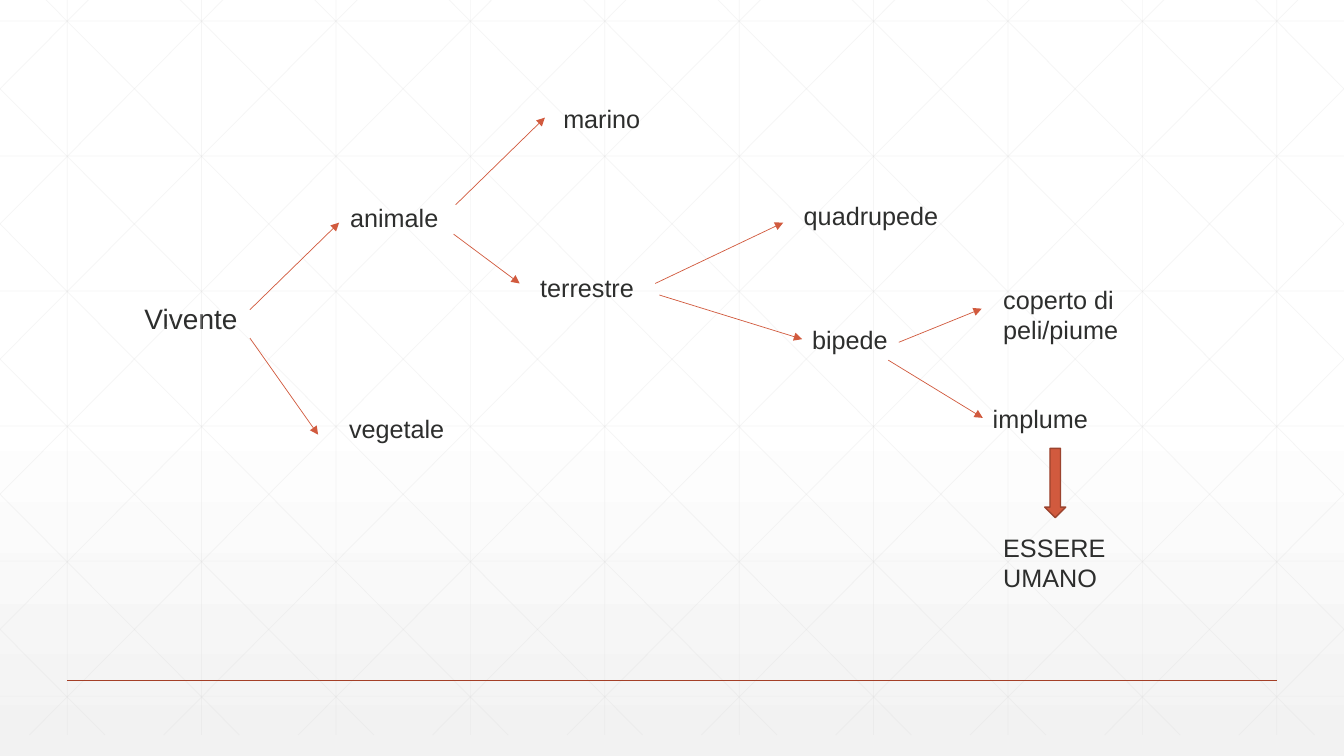
from copy import deepcopy

from lxml.etree import SubElement
from pptx import Presentation
from pptx.dml.color import RGBColor
from pptx.enum.shapes import MSO_CONNECTOR as Connector, MSO_SHAPE as Shape
from pptx.enum.text import MSO_ANCHOR as Anchor, MSO_AUTO_SIZE as AutoSize
from pptx.oxml.ns import qn
from pptx.util import Pt

EMU_PER_PX = 9525
WIDTH, HEIGHT = 1280, 720
LEFT_SIDE = 1
COLORS = {
    "white": "FFFFFF",
    "mist": "F2F2F2",
    "grid": "D9D9D9",
    "rule": "A43F27",
    "arrow": "D15A3E",
    "arrow_edge": "9B432E",
    "text": "2D2E2D",
}
# text, left, top, width, height
TERMS = [
    ("animale", 324, 188, 162, 38),
    ("vegetale", 323, 389, 162, 38),
    ("marino", 527, 94, 164, 38),
    ("terrestre", 505, 255, 164, 38),
    ("quadrupede", 756, 186, 164, 38),
    ("bipede", 764, 304, 164, 38),
    ("coperto di peli/piume", 946, 266, 164, 68),
    ("implume", 936, 379, 164, 38),
    ("ESSERE\nUMANO", 946, 502, 149, 68),
]
# start, end, term whose left side the arrow joins
BRANCHES = [
    ((238, 295), (323, 212), None),
    ((238, 322), (303, 414), None),
    ((434, 195), (519, 112), None),
    ((432, 223), (495, 270), None),
    ((624, 270), (746, 212), None),
    ((628, 281), (764, 323), "bipede"),
    ((856, 326), (935, 294), None),
    ((846, 343), (936, 398), "implume"),
]


def px(*lengths):
    """Turn pixel lengths into a list of EMU."""
    return [round(length * EMU_PER_PX) for length in lengths]


def rgb(name):
    return RGBColor.from_string(COLORS[name])


def write_text(frame, text, size=18, color="text", font="Arial"):
    frame.word_wrap = True
    frame.text = text
    for paragraph in frame.paragraphs:
        paragraph.font.size = Pt(size)
        paragraph.font.name = font
        paragraph.font.color.rgb = rgb(color)


def add_line(shapes, start, end, color="arrow", weight=0.5, opacity=None, arrow=False):
    line = shapes.add_connector(Connector.STRAIGHT, *px(*start, *end))
    line.line.color.rgb = rgb(color)
    line.line.width = Pt(weight)
    properties = line.line._get_or_add_ln()
    if opacity:
        tint = properties.find(".//" + qn("a:srgbClr"))
        SubElement(tint, qn("a:alpha"), val=str(opacity * 1000))
    if arrow:
        SubElement(properties, qn("a:tailEnd"), type="triangle")
    SubElement(line._element.spPr, qn("a:effectLst"))
    return line


def paint_background(slide):
    fill = slide.background.fill
    fill.gradient()
    fill.gradient_angle = 270
    stop_list = slide.element.find(".//" + qn("a:gsLst"))
    stop_list.insert(1, deepcopy(stop_list[0]))
    stops = [(0, "white"), (0.53, "white"), (1, "mist")]
    for stop, (position, color) in zip(fill.gradient_stops, stops):
        stop.position = position
        stop.color.rgb = rgb(color)


def add_grid(slide):
    """Draw the faint square grid and the diagonals, cut off at the slide sides."""
    top, bottom, step, run = -20, 700, 128, 716
    slope = (bottom - top) / run
    segments = [((x, top), (x, bottom)) for x in range(64, WIDTH, step)]
    for row in range(6):
        y = 20 + 128.6 * row
        segments.append(((0, y), (WIDTH, y)))
    for column in range(-5, 10):
        origin = 24 + step * column
        left, right = max(origin, 0), min(origin + run, WIDTH)
        y_left, y_right = (top + (x - origin) * slope for x in (left, right))
        segments.append(((left, y_left), (right, y_right)))
        segments.append(((WIDTH - left, y_left), (WIDTH - right, y_right)))
    grid = slide.shapes.add_group_shape()
    for start, end in segments:
        add_line(grid.shapes, start, end, color="grid", opacity=25)


def place_root(placeholder, text):
    """Set the root of the tree in the body placeholder, without a bullet."""
    placeholder.left, placeholder.top, placeholder.width, placeholder.height = px(128, 122, 1008, 400)
    frame = placeholder.text_frame
    write_text(frame, text, size=20)
    frame.auto_size = AutoSize.NONE
    frame.vertical_anchor = Anchor.TOP
    frame.margin_top, = px(165)
    paragraph = frame.paragraphs[0]
    paragraph.space_before = Pt(0)
    properties = paragraph._p.get_or_add_pPr()
    properties.set("marL", "0")
    properties.set("indent", "0")
    properties.insert_element_before(
        properties.makeelement(qn("a:buNone")), "a:tabLst", "a:defRPr", "a:extLst")


def add_term(slide, text, *box):
    term = slide.shapes.add_textbox(*px(*box))
    write_text(term.text_frame, text)
    return term


def add_down_arrow(slide, *box):
    arrow = slide.shapes.add_shape(Shape.DOWN_ARROW, *px(*box))
    arrow.shadow.inherit = False
    arrow.fill.solid()
    arrow.fill.fore_color.rgb = rgb("arrow")
    arrow.line.color.rgb = rgb("arrow_edge")
    arrow.line.width = Pt(1)


def main():
    presentation = Presentation()
    presentation.slide_width, presentation.slide_height = px(WIDTH, HEIGHT)
    slide = presentation.slides.add_slide(presentation.slide_layouts.get_by_name("Title and Content"))
    title = slide.shapes.title._element
    title.getparent().remove(title)

    paint_background(slide)
    add_grid(slide)
    add_line(slide.shapes, (64, 648), (1216, 648), color="rule", weight=1)
    place_root(slide.placeholders[1], "Vivente")
    terms = {text: add_term(slide, text, *box) for text, *box in TERMS}
    for start, end, target in BRANCHES:
        branch = add_line(slide.shapes, start, end, arrow=True)
        if target:
            branch.end_connect(terms[target], LEFT_SIDE)
    add_down_arrow(slide, 995, 427, 20, 66)
    presentation.save("out.pptx")


if __name__ == "__main__":
    main()
